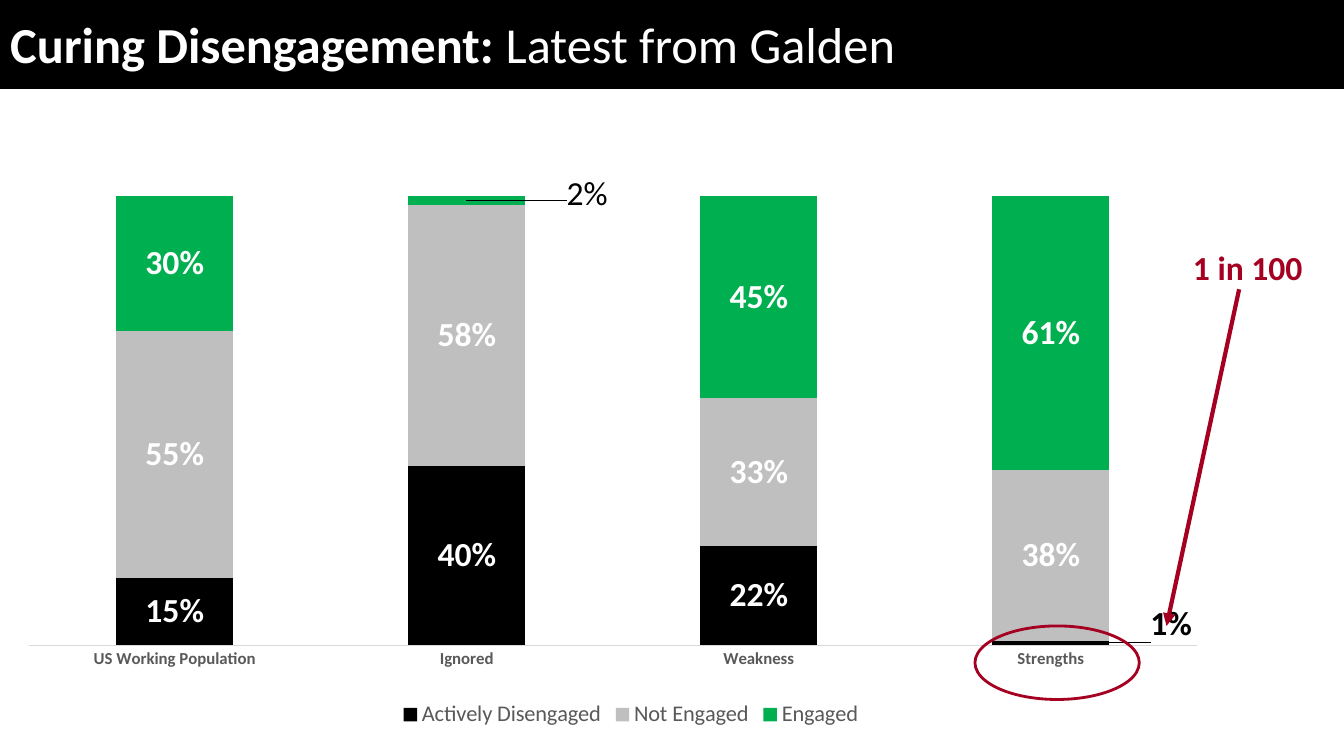
from lxml import etree
from pptx import Presentation
from pptx.chart.data import CategoryChartData
from pptx.dml.color import RGBColor
from pptx.enum.chart import XL_CHART_TYPE, XL_LEGEND_POSITION, XL_TICK_MARK
from pptx.enum.shapes import MSO_CONNECTOR, MSO_SHAPE
from pptx.enum.text import MSO_ANCHOR, PP_ALIGN
from pptx.oxml.ns import qn
from pptx.util import Inches, Pt

STACKED = XL_CHART_TYPE.COLUMN_STACKED
BOTTOM = XL_LEGEND_POSITION.BOTTOM
NO_TICK = XL_TICK_MARK.NONE
RECT, OVAL = MSO_SHAPE.RECTANGLE, MSO_SHAPE.OVAL
STRAIGHT = MSO_CONNECTOR.STRAIGHT
TOP, CENTER = MSO_ANCHOR.TOP, PP_ALIGN.CENTER

BLACK = RGBColor(0x00, 0x00, 0x00)
WHITE = RGBColor(0xFF, 0xFF, 0xFF)
GRAY = RGBColor(0xBF, 0xBF, 0xBF)
GREEN = RGBColor(0x00, 0xB0, 0x50)
RED = RGBColor(0xA5, 0x00, 0x21)
TEXT_GRAY = RGBColor(0x59, 0x59, 0x59)
AXIS_GRAY = RGBColor(0xD9, 0xD9, 0xD9)

CATEGORIES = ["US Working Population", "Ignored", "Weakness", "Strengths"]
SERIES = [
    ("Actively Disengaged", (0.15, 0.40, 0.22, 0.01), BLACK),
    ("Not Engaged", (0.55, 0.58, 0.33, 0.38), GRAY),
    ("Engaged", (0.30, 0.02, 0.45, 0.61), GREEN),
]


class Deck:
    """Holds the style and the current slide, and draws each kind of element."""

    font = "Calibri"

    def __init__(self):
        self.prs = Presentation()
        self.prs.slide_width, self.prs.slide_height = Inches(13.33), Inches(7.5)
        self.s = self.prs.slides.add_slide(self.prs.slide_layouts[5])

    def style(self, font, size, color, bold=False):
        font.name, font.size, font.bold = self.font, Pt(size), bold
        font.color.rgb = color

    def run(self, p, text, size, color, bold=False):
        r = p.add_run()
        r.text = text
        self.style(r.font, size, color, bold)

    def title(self, box, runs):
        sp = self.s.shapes.title
        sp.left, sp.top, sp.width, sp.height = map(Inches, box)
        tf = sp.text_frame
        tf.vertical_anchor, tf.word_wrap = TOP, True
        p = tf.paragraphs[0]
        p.alignment, p.line_spacing = PP_ALIGN.LEFT, 0.9
        for text, bold in runs:
            self.run(p, text, 36, WHITE, bold)

    def shape(self, kind, box, color, width, fill=None):
        sp = self.s.shapes.add_shape(kind, *map(Inches, box))
        sp.shadow.inherit = False
        if fill is None:
            sp.fill.background()
        else:
            sp.fill.solid()
            sp.fill.fore_color.rgb = fill
        sp.line.color.rgb, sp.line.width = color, Pt(width)
        return sp

    def banner(self, box):
        sp = self.shape(RECT, box, BLACK, 3, BLACK)
        self.s.shapes.title._element.addprevious(sp._element)

    def text(self, box, text, size, color):
        tf = self.s.shapes.add_textbox(*map(Inches, box)).text_frame
        tf.word_wrap = True
        p = tf.paragraphs[0]
        p.alignment = CENTER
        self.run(p, text, size, color, True)

    def arrow(self, start, end, color, width):
        cx = self.s.shapes.add_connector(STRAIGHT, *map(Inches, start + end))
        cx.line.color.rgb, cx.line.width = color, Pt(width)
        etree.SubElement(cx.line._get_or_add_ln(), qn("a:tailEnd"), type="triangle")
        etree.SubElement(cx._element.spPr, qn("a:effectLst"))

    def layout(self, parent, index, **values):
        for old in parent.findall(qn("c:layout")):
            parent.remove(old)
        layout = etree.Element(qn("c:layout"))
        manual = etree.SubElement(layout, qn("c:manualLayout"))
        for tag, val in values.items():
            etree.SubElement(manual, qn("c:" + tag), val=str(val))
        parent.insert(index, layout)

    def chart(self, box):
        data = CategoryChartData(number_format="0%")
        data.categories = CATEGORIES
        for name, values, _ in SERIES:
            data.add_series(name, values)
        chart = self.s.shapes.add_chart(STACKED, *map(Inches, box), data).chart
        self.style(chart.font, 10, BLACK)
        chart.has_title = False
        chart.has_legend = True
        chart.legend.position = BOTTOM
        chart.legend.include_in_layout = False
        self.style(chart.legend.font, 16, TEXT_GRAY)

        axis = chart.category_axis
        axis.major_tick_mark = axis.minor_tick_mark = NO_TICK
        axis.format.line.color.rgb, axis.format.line.width = AXIS_GRAY, Pt(0.75)
        self.style(axis.tick_labels.font, 12, TEXT_GRAY, True)
        axis = chart.value_axis
        axis.minimum_scale, axis.maximum_scale = 0, 1.2
        axis.has_major_gridlines = axis.visible = False

        plot = chart.plots[0]
        plot.gap_width, plot.overlap, plot.vary_by_categories = 150, 100, False
        for ser, (_, _, color) in zip(plot.series, SERIES):
            ser.format.fill.solid()
            ser.format.fill.fore_color.rgb = color
            labels = ser.data_labels
            labels.show_value = True
            labels.number_format, labels.number_format_is_linked = "0%", False
            self.style(labels.font, 24, WHITE, True)
        self.layout(plot._element.getparent(), 0, layoutTarget="inner",
                    xMode="edge", yMode="edge", x=0, y=0, w=0.97, h=0.86)
        return plot

    def outside_label(self, ser, index, x, y, bold, text=None):
        label = ser.points[index].data_label
        if text:
            self.run(label.text_frame.paragraphs[0], text, 24, BLACK, bold)
        else:
            self.style(label.font, 24, BLACK, bold)
        self.layout(ser.data_labels._element.find(qn("c:dLbl")), 1, x=x, y=y)


def main():
    deck = Deck()
    deck.banner((0, -0.05, 13.33, 0.91))
    deck.title((0, 0.15, 11.26, 0.77),
               [("Curing Disengagement: ", True), ("Latest from Galden", False)])
    disengaged, _, engaged = deck.chart((0.28, 1.06, 11.95, 6.21)).series
    deck.outside_label(disengaged, 3, 0.1, -0.03, True)
    deck.outside_label(engaged, 1, 0.1, -0.01, False, "2%")
    deck.text((11.57, 2.4, 1.61, 0.54), "1 in 100", 24, RED)
    deck.shape(OVAL, (9.67, 6.21, 1.63, 0.73), RED, 2)
    deck.arrow((12.29, 2.87), (11.57, 6.21), RED, 3)
    deck.prs.save("out.pptx")


if __name__ == "__main__":
    main()
